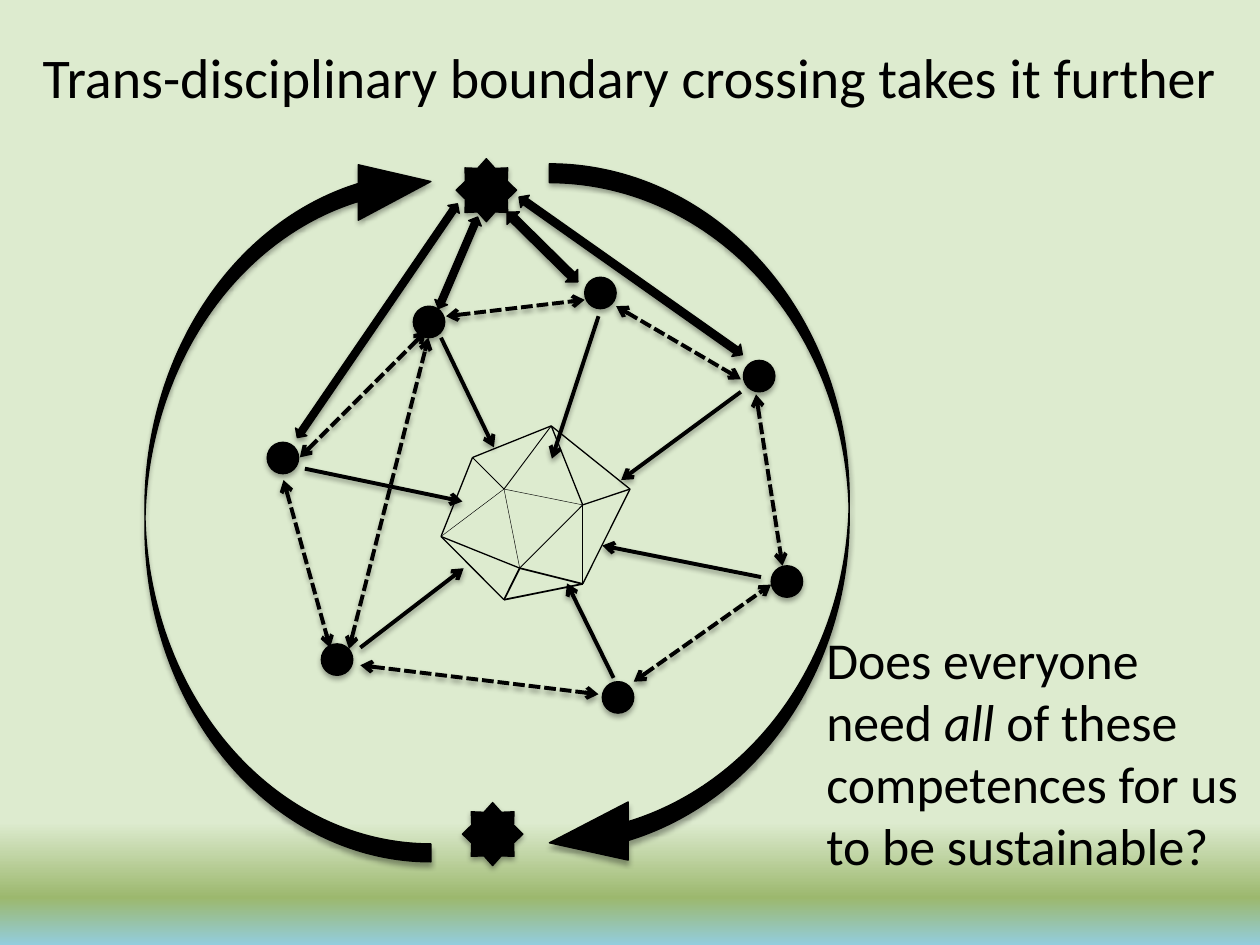
from lxml import etree
from pptx import Presentation
from pptx import util as u
from pptx.dml.color import RGBColor
from pptx.enum import dml, shapes, text
from pptx.oxml.ns import qn

INK = "000000"
KIND = shapes.MSO_SHAPE


def inch(n):
    return u.Cm(n * 2.54)


def tint(code):
    return RGBColor.from_string(code)


def sub(node, tag, **attrs):
    return etree.SubElement(node, qn(tag), attrs)


def shade(item, on=True):
    fx = sub(item.element.spPr, "a:effectLst")
    if on:
        glow = sub(fx, "a:outerShdw", blurRad=str(u.Pt(3.1)), dist=str(u.Pt(1.8)),
                   dir="5400000", rotWithShape="0")
        sub(sub(glow, "a:srgbClr", val=INK), "a:alpha", val="35000")


def solid(slide, kind, box, x, y, w, h, turn=0, adj=()):
    item = slide.shapes.add_shape(kind, inch(box[0] + x), inch(box[1] + y), inch(w), inch(h))
    item.rotation = turn
    for i, part in enumerate(adj):
        item.adjustments[i] = part
    item.fill.solid()
    item.fill.fore_color.rgb = tint(INK)
    item.line.color.rgb = tint(INK)
    item.line.width = u.Pt(0.75)
    shade(item)


def line(slide, box, ends, width, dash=False, tips=()):
    x, y, to_x, to_y = ends
    item = slide.shapes.add_connector(
        shapes.MSO_CONNECTOR.STRAIGHT, inch(box[0] + x), inch(box[1] + y),
        inch(box[0] + to_x), inch(box[1] + to_y))
    item.line.color.rgb = tint(INK)
    item.line.width = u.Pt(width)
    if dash:
        item.line.dash_style = dml.MSO_LINE.SQUARE_DOT
    for tip in tips:
        sub(item.line._get_or_add_ln(), tip, type="arrow")
    shade(item, on=bool(tips))


def write(slide, box, runs, size, align=text.PP_ALIGN.LEFT):
    frame = slide.shapes.add_textbox(*map(inch, box)).text_frame
    frame.word_wrap = True
    para = frame.paragraphs[0]
    para.alignment = align
    for words, slant in runs:
        run = para.add_run()
        run.text = words
        run.font.name = "Calibri"
        run.font.size = u.Pt(size)
        run.font.italic = slant
        run.font.color.rgb = tint(INK)


def ground(slide):
    fill = slide.background.fill
    fill.gradient()
    fill.gradient_angle = 270
    stops = next(slide.element.iter(qn("a:gsLst")))
    for old in list(stops):
        stops.remove(old)
    for spot, code in ((87, "DDEBCF"), (95, "9CB86E"), (100, "93CDDD")):
        sub(sub(stops, "a:gs", pos=str(spot * 1000)), "a:srgbClr", val=code)


def web(slide, box):
    dots = [(2.52, 0), (3.78, 0.66), (4, 2.29), (1.16, 0.23), (0, 1.31),
            (2.66, 3.21), (0.43, 2.91)]
    spokes = [(3.76, 0.91, 2.81, 1.61), (3.92, 2.38, 2.66, 2.13), (2.75, 3.18, 2.38, 2.43),
              (0.74, 2.94, 1.56, 2.31), (0.3, 1.52, 1.55, 1.78), (2.63, 0.31, 2.26, 1.44),
              (1.38, 0.48, 1.8, 1.35)]
    links = [(0.26, 1.43, 1.26, 0.43), (1.42, 0.31, 2.52, 0.18), (2.77, 0.23, 3.76, 0.81),
             (3.88, 0.93, 4.09, 2.29), (0.13, 1.61, 0.5, 2.94), (2.91, 3.21, 4, 2.44),
             (0.74, 3.08, 2.63, 3.31), (0.65, 2.95, 1.28, 0.48)]
    for x, y in dots:
        solid(slide, KIND.OVAL, box, x, y, 0.25, 0.25)
    for ends in spokes:
        line(slide, box, ends, 2.25, tips=["a:tailEnd"])
    for ends in links:
        line(slide, box, ends, 2.25, dash=True, tips=["a:headEnd", "a:tailEnd"])


def ring(slide, box):
    for x, y in ((2.47, 0.04), (2.52, 5.15)):
        solid(slide, KIND.STAR_8_POINT, box, x, y, 0.48, 0.5)
    for x, y, w, turn, head in ((3.21, 0.08, 2.38, 0, 0.263), (0, 0, 2.27, 180, 0.254)):
        solid(slide, KIND.CURVED_LEFT_ARROW, box, x, y, w, 5.62, turn, (0.063, 0.194, head))
    for beam in ((0.72, 1.27, 2.25, 0.11, 124.4), (2.09, 0.81, 0.79, 0.11, 113.2),
                 (2.76, 0.67, 0.79, 0.14, 44.6), (2.77, 0.91, 2.17, 0.12, 35.2)):
        solid(slide, KIND.LEFT_RIGHT_ARROW, box, *beam)


def gem(slide, box):
    spots = {"top": (7, 0), "nw": (2, 2), "east": (12, 4), "mid": (4, 4), "hub": (9, 5),
             "west": (0, 7), "low": (5, 9), "se": (9, 10), "base": (4, 11)}
    edges = {
        0.25: ["mid hub", "mid west", "mid low"],
        0.5: ["mid nw", "low hub", "top mid"],
        0.75: ["se east", "hub top", "top east", "top nw", "nw west", "west base",
               "east hub", "hub se", "west low"],
        1: ["low base", "base se", "low se"],
    }
    dx, dy = box[2] / 12, box[3] / 11
    for width, pairs in edges.items():
        for pair in pairs:
            (x, y), (to_x, to_y) = (spots[name] for name in pair.split())
            line(slide, box, (x * dx, y * dy, to_x * dx, to_y * dy), width)


def main():
    deck = Presentation()
    deck.slide_width, deck.slide_height = u.Cm(25.4), u.Cm(19.05)
    slide = deck.slides.add_slide(deck.slide_layouts[6])
    ground(slide)
    web(slide, (2.12, 2.2, 4.25, 3.46))
    ring(slide, (1.15, 1.22, 5.59, 5.65))
    gem(slide, (3.5, 3.38, 1.5, 1.38))
    write(slide, (0, 0.29, 10, 0.64),
          [("Trans-disciplinary boundary crossing takes it further", False)],
          32, align=text.PP_ALIGN.CENTER)
    write(slide, (6.46, 4.93, 3.54, 2.44),
          [("Does everyone need ", False), ("all", True),
           (" of these competences for us to be sustainable?", False)], 29.6)
    deck.save("out.pptx")


if __name__ == "__main__":
    main()
